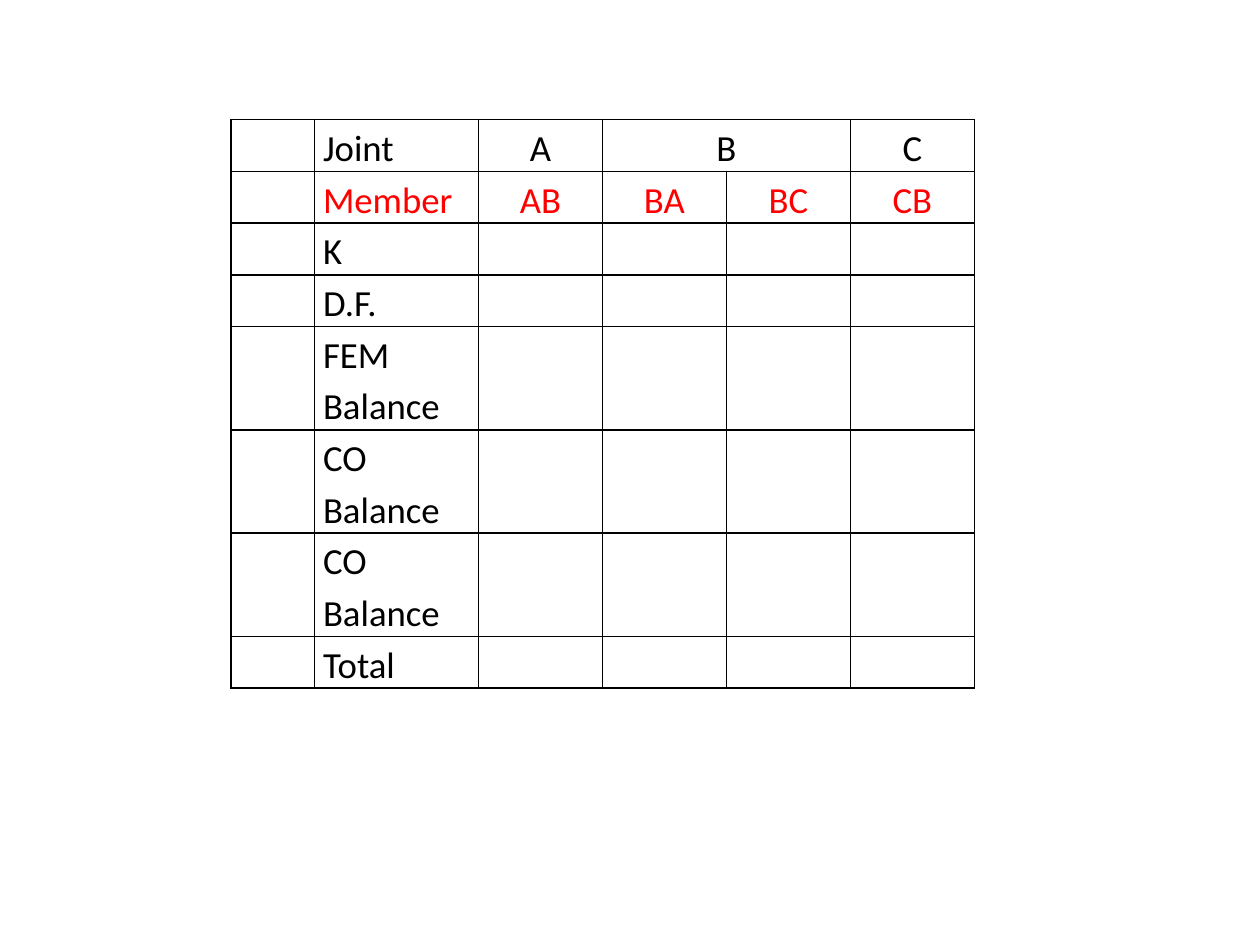
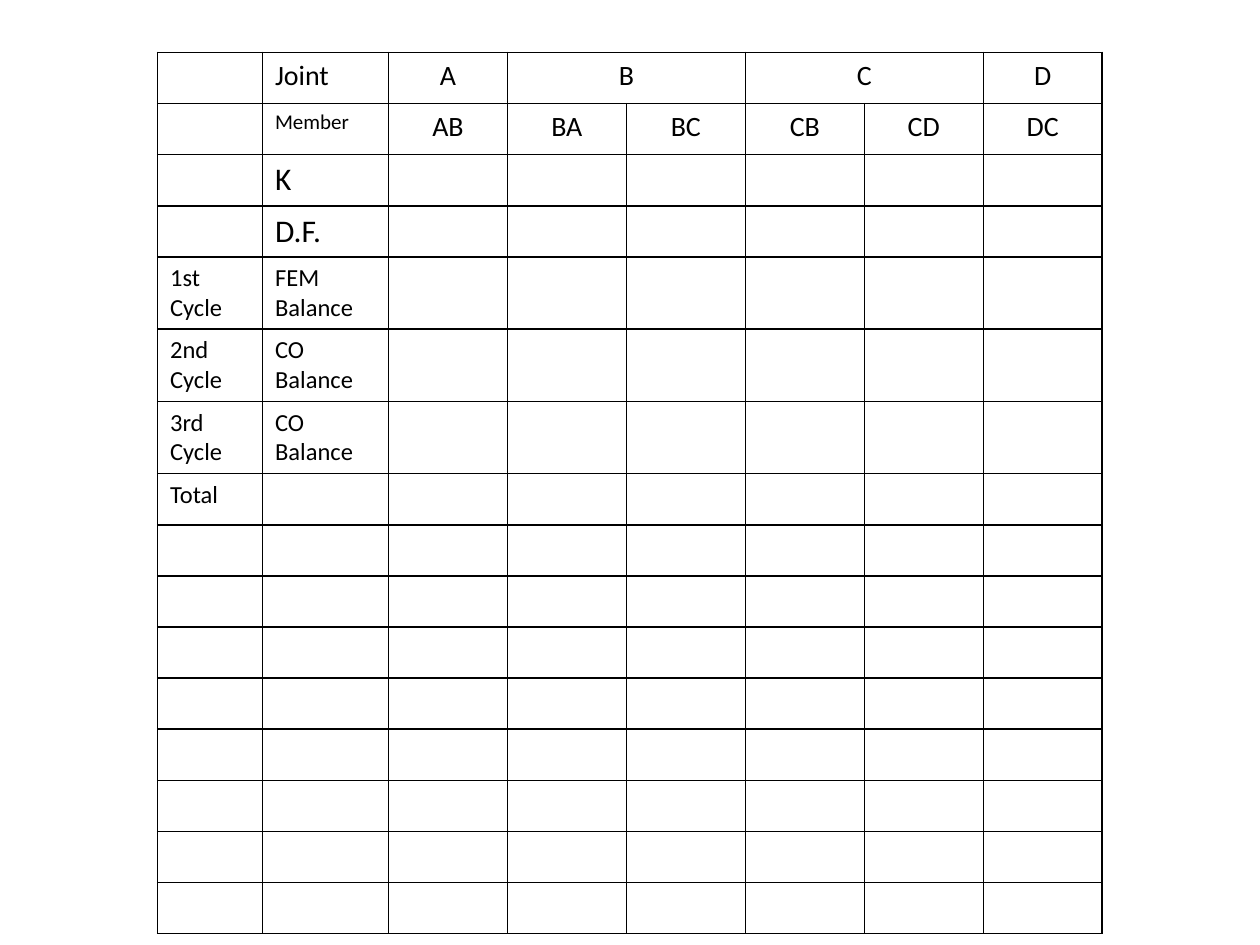
from dataclasses import dataclass

from lxml import etree
from pptx import Presentation
from pptx.dml.color import RGBColor
from pptx.enum.text import PP_ALIGN
from pptx.oxml.ns import qn
from pptx.util import Pt

LEFT, CENTER = PP_ALIGN.LEFT, PP_ALIGN.CENTER
FONT = "Calibri"
COLORS = {"ink": "000000", "member": "FF0000"}
EDGES = ("a:lnL", "a:lnR", "a:lnT", "a:lnB")
LABELS = 2


@dataclass
class Row:
    texts: tuple[str, ...]
    high: float
    size: float
    lead: float = 0
    color: str = "ink"


@dataclass
class Grid:
    left: float
    top: float
    wides: list[float]
    rows: list[Row]
    spans: list[tuple[int, int]]
    pad: tuple[float, float]
    space: float


def add_edges(cell) -> None:
    props = cell._tc.get_or_add_tcPr()
    for spot, name in enumerate(EDGES):
        edge = etree.Element(qn(name), w=str(Pt(1)))
        fill = etree.SubElement(edge, qn("a:solidFill"))
        etree.SubElement(fill, qn("a:srgbClr"), val=COLORS["ink"])
        props.insert(spot, edge)


def add_text(cell, text: str, size: float, color: str, align, space: float) -> None:
    frame = cell.text_frame
    for num, line in enumerate(text.split("\n")):
        para = frame.add_paragraph() if num else frame.paragraphs[0]
        para.alignment = align
        para.line_spacing = space
        run = para.add_run()
        run.text = line
        run.font.name = FONT
        run.font.size = Pt(size)
        run.font.color.rgb = RGBColor.from_string(COLORS[color])


def draw_grid(slide, grid: Grid) -> None:
    wide = sum(grid.wides)
    high = sum(row.high for row in grid.rows)
    table = slide.shapes.add_table(
        len(grid.rows), len(grid.wides),
        Pt(grid.left), Pt(grid.top), Pt(wide), Pt(high),
    ).table
    table.first_row = table.horz_banding = False
    for col, width in zip(table.columns, grid.wides):
        col.width = Pt(width)
    for y, row in enumerate(grid.rows):
        table.rows[y].height = Pt(row.high)
        for x in range(len(grid.wides)):
            cell = table.cell(y, x)
            cell.margin_left = cell.margin_right = Pt(grid.pad[0])
            cell.margin_top = cell.margin_bottom = Pt(grid.pad[1])
            cell.fill.background()
            add_edges(cell)
            text = row.texts[x] if x < len(row.texts) else ""
            if text:
                label = x < LABELS
                size = row.lead if label and row.lead else row.size
                add_text(cell, text, size, row.color,
                         LEFT if label else CENTER, grid.space)
    for start, end in grid.spans:
        table.cell(0, start).merge(table.cell(0, end))


def beam_grid() -> Grid:
    line, pair, size = 27.2, 56, 21
    rows = [
        Row(("", "Joint", "A", "B", "", "C"), line, size),
        Row(("", "Member", "AB", "BA", "BC", "CB"), line, size, color="member"),
        *(Row(("", name), line, size) for name in ("K", "D.F.")),
        *(Row(("", f"{name}\nBalance"), pair, size) for name in ("FEM", "CO", "CO")),
        Row(("", "Total"), line, size),
    ]
    return Grid(132, 68.4, [47.6, 93.8] + [70.85] * 4, rows, [(3, 4)], (5, 0), 1.15)


def frame_grid() -> Grid:
    line, pair = 29.2, 41
    steps = (("1st", "FEM"), ("2nd", "CO"), ("3rd", "CO"))
    rows = [
        Row(("", "Joint", "A", "B", "", "C", "", "D"), line, 16),
        Row(("", "Member", "AB", "BA", "BC", "CB", "CD", "DC"), line, 16, lead=12),
        *(Row(("", name), line, 18) for name in ("K", "D.F.")),
        *(Row((f"{turn}\nCycle", f"{name}\nBalance"), pair, 14)
          for turn, name in steps),
        Row(("Total",), line, 14),
        *(Row((), line, 14) for _ in range(8)),
    ]
    return Grid(90, 30, [60, 72] + [68] * 6, rows, [(3, 4), (5, 6)], (7.2, 3.6), 1.0)


def main() -> None:
    deck = Presentation()
    deck.slide_width, deck.slide_height = Pt(720), Pt(540)
    blank = deck.slide_layouts[6]
    for grid in (beam_grid(), frame_grid()):
        draw_grid(deck.slides.add_slide(blank), grid)
    deck.save("out.pptx")


if __name__ == "__main__":
    main()
